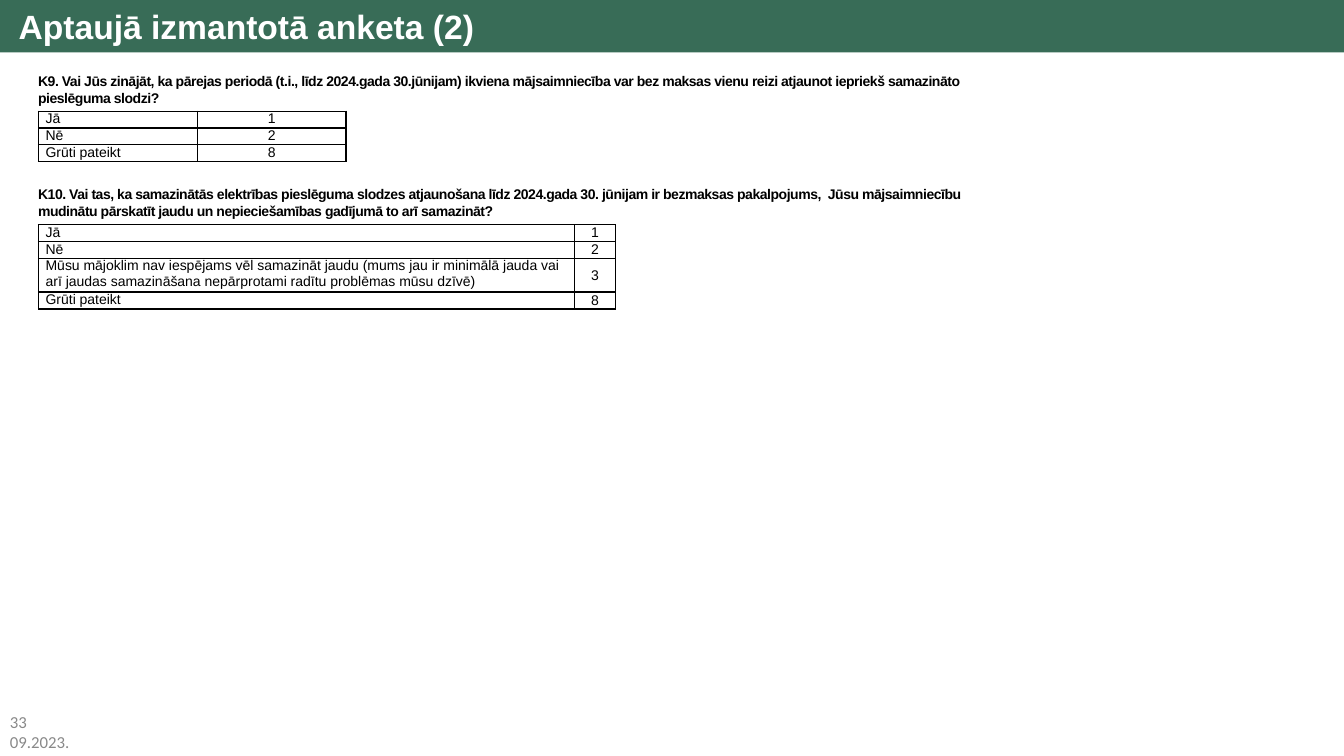
from dataclasses import dataclass

from lxml import etree
from pptx import Presentation
from pptx import util as u
from pptx.dml.color import RGBColor
from pptx.enum import shapes, text
from pptx.oxml.ns import qn

BLACK, WHITE, GREEN, GREY = "000000", "FFFFFF", "386C57", "898989"
LINE_HEIGHT = 0.42  # cm, one line of a table
CELL_INSET = 0.18
MARGIN = 0.71
TABLE_LEFT = 0.97


@dataclass
class Answer:
    label: str
    code: str
    lines: int = 1


@dataclass
class Question:
    wording: str
    top: float
    width: float
    table_top: float
    columns: tuple[float, float]
    label_align: text.PP_ALIGN
    code_anchor: text.MSO_ANCHOR
    answers: list[Answer]


QUESTIONS = [
    Question(
        "K9. Vai Jūs zinājāt, ka pārejas periodā (t.i., līdz 2024.gada 30.jūnijam) ikviena "
        "mājsaimniecība var bez maksas vienu reizi atjaunot iepriekš samazināto pieslēguma slodzi?",
        1.7, 23.95, 2.8, (4.0, 3.75), text.PP_ALIGN.JUSTIFY, text.MSO_ANCHOR.TOP,
        [Answer("Jā", "1"), Answer("Nē", "2"), Answer("Grūti pateikt", "8")],
    ),
    Question(
        "K10. Vai tas, ka samazinātās elektrības pieslēguma slodzes atjaunošana līdz 2024.gada "
        "30. jūnijam ir bezmaksas pakalpojums,  Jūsu mājsaimniecību mudinātu pārskatīt jaudu "
        "un nepieciešamības gadījumā to arī samazināt?",
        4.55, 24.5, 5.66, (13.5, 1.05), text.PP_ALIGN.LEFT, text.MSO_ANCHOR.MIDDLE,
        [
            Answer("Jā", "1"),
            Answer("Nē", "2"),
            Answer("Mūsu mājoklim nav iespējams vēl samazināt jaudu (mums jau ir minimālā jauda "
                   "vai arī jaudas samazināšana nepārprotami radītu problēmas mūsu dzīvē)", "3", 2),
            Answer("Grūti pateikt", "8"),
        ],
    ),
]


def color(value: str) -> RGBColor:
    return RGBColor.from_string(value)


def write(frame, words: str, size: float, ink: str, font: str = "Arial",
          bold: bool = False, align=text.PP_ALIGN.LEFT, spacing: int = 0) -> None:
    """Fill a text frame; spacing is in hundredths of a point."""
    frame.text = words
    frame.word_wrap = True
    for paragraph in frame.paragraphs:
        paragraph.alignment = align
        for run in paragraph.runs:
            run.font.size = u.Pt(size)
            run.font.name = font
            run.font.bold = bold
            run.font.color.rgb = color(ink)
            if spacing:
                run.font._element.set("spc", str(spacing))


def add_borders(cell) -> None:
    properties = cell._tc.get_or_add_tcPr()
    for position, side in enumerate(("lnL", "lnR", "lnT", "lnB")):
        line = etree.Element(qn(f"a:{side}"), w=str(u.Pt(1)))
        fill = etree.SubElement(line, qn("a:solidFill"))
        etree.SubElement(fill, qn("a:srgbClr"), val=BLACK)
        properties.insert(position, line)


def fill_cell(cell, words: str, align: text.PP_ALIGN, anchor: text.MSO_ANCHOR) -> None:
    write(cell.text_frame, words, 10, BLACK, align=align)
    cell.vertical_anchor = anchor
    cell.margin_left = cell.margin_right = u.Cm(CELL_INSET)
    cell.margin_top = cell.margin_bottom = 0
    cell.fill.background()
    add_borders(cell)


def add_question(slide, question: Question) -> None:
    wording = slide.shapes.add_textbox(
        u.Cm(MARGIN), u.Cm(question.top), u.Cm(question.width), u.Cm(1.12))
    write(wording.text_frame, question.wording, 10, BLACK, bold=True, spacing=-30)

    height = LINE_HEIGHT * sum(answer.lines for answer in question.answers)
    table = slide.shapes.add_table(
        len(question.answers), 2, u.Cm(TABLE_LEFT), u.Cm(question.table_top),
        u.Cm(sum(question.columns)), u.Cm(height)).table
    table.first_row = table.horz_banding = False
    for column, width in zip(table.columns, question.columns):
        column.width = u.Cm(width)
    for index, answer in enumerate(question.answers):
        table.rows[index].height = u.Cm(LINE_HEIGHT * answer.lines)
        fill_cell(table.cell(index, 0), answer.label, question.label_align, text.MSO_ANCHOR.TOP)
        fill_cell(table.cell(index, 1), answer.code, text.PP_ALIGN.CENTER, question.code_anchor)


def add_title(slide, width: int) -> None:
    banner = slide.shapes.add_shape(shapes.MSO_SHAPE.RECTANGLE, 0, 0, width, u.Cm(1.32))
    banner.shadow.inherit = False
    banner.fill.solid()
    banner.fill.fore_color.rgb = color(GREEN)
    banner.line.fill.background()
    banner.text_frame.margin_left = u.Cm(0.47)
    banner.text_frame.vertical_anchor = text.MSO_ANCHOR.MIDDLE
    write(banner.text_frame, "Aptaujā izmantotā anketa (2)", 24, WHITE, bold=True)


def main() -> None:
    presentation = Presentation()
    presentation.slide_width, presentation.slide_height = u.Cm(33.87), u.Cm(19.05)
    slide = presentation.slides.add_slide(presentation.slide_layouts[6])

    # Page number and date
    footer = slide.shapes.add_textbox(0, u.Cm(17.8), u.Cm(3.76), u.Cm(1.25))
    write(footer.text_frame, "33\n09.2023.", 12, GREY, font="Calibri")

    # Title banner
    add_title(slide, presentation.slide_width)

    # Questions with their answer tables
    for question in QUESTIONS:
        add_question(slide, question)

    presentation.save("out.pptx")


if __name__ == "__main__":
    main()
